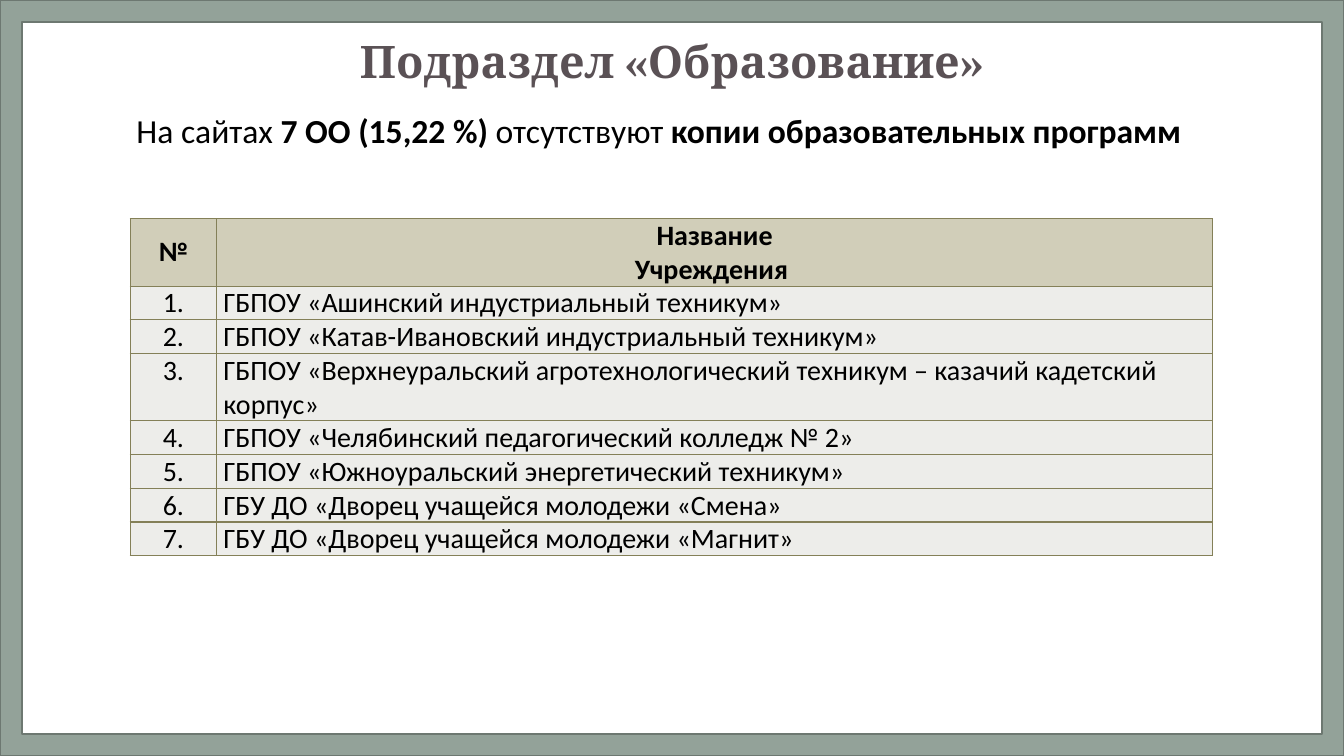
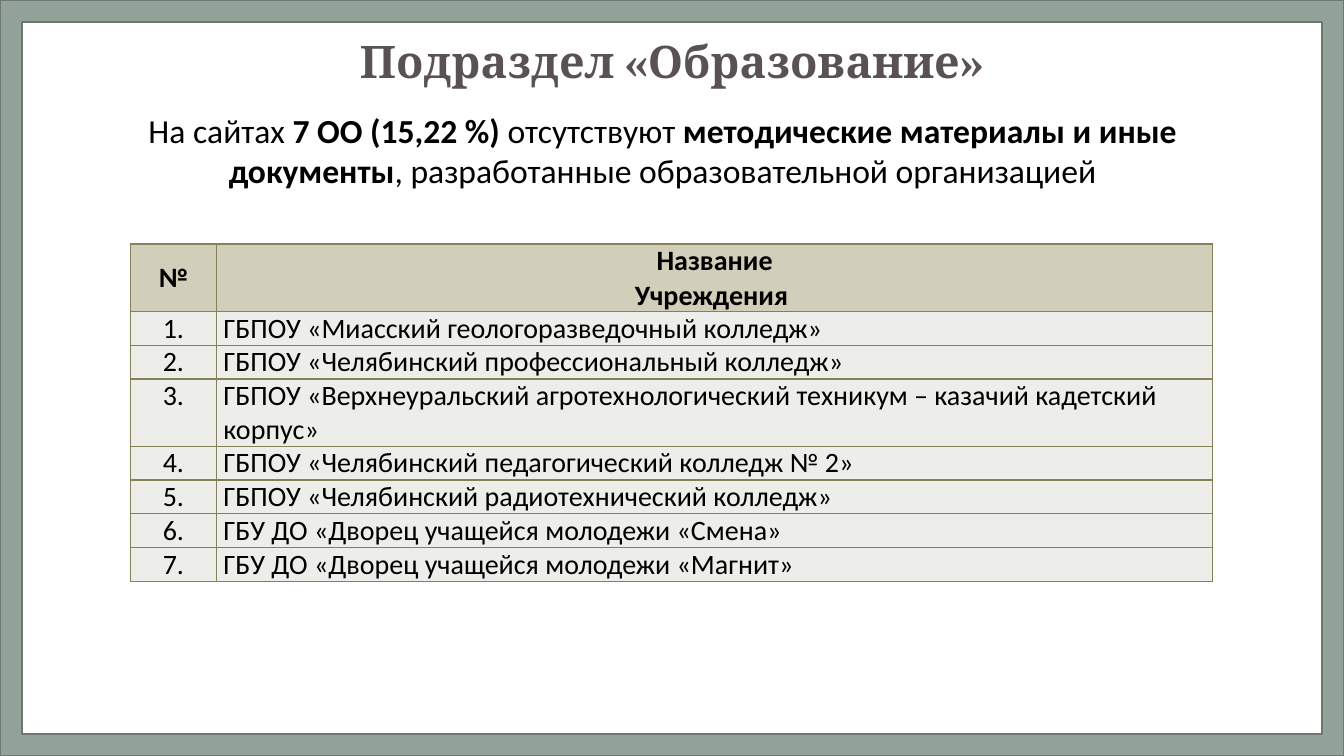
from dataclasses import dataclass

from lxml.etree import SubElement
from pptx import Presentation
from pptx.dml.color import RGBColor
from pptx.enum.shapes import MSO_SHAPE as Shape
from pptx.enum.text import MSO_ANCHOR as Anchor, PP_ALIGN as Align
from pptx.oxml.ns import qn
from pptx.util import Cm, Pt


@dataclass(frozen=True)
class Theme:
    frame: str = "93A299"
    frame_line: str = "6D7871"
    title: str = "5A5155"
    text: str = "000000"
    header_fill: str = "D1CEB9"
    row_fill: str = "EDEDEA"
    border: str = "848058"
    title_font: str = "Cambria"
    body_font: str = "Calibri"
    title_size: int = 32
    lead_size: int = 24
    table_size: int = 20


class Report:
    """Holds the deck, its style and the current page."""

    def __init__(self, theme):
        self.theme = theme
        self.deck = Presentation()
        self.deck.slide_width, self.deck.slide_height = Cm(33.87), Cm(19.05)
        self.page = None

    def add_page(self, title):
        self.page = self.deck.slides.add_slide(self.deck.slide_layouts[6])
        self.add_frame()
        self.add_title(title)

    def add_frame(self):
        frame = self.page.shapes.add_shape(
            Shape.FRAME, 0, 0, self.deck.slide_width, self.deck.slide_height)
        frame.adjustments[0] = 0.029
        frame.shadow.inherit = False
        frame.fill.solid()
        frame.fill.fore_color.rgb = RGBColor.from_string(self.theme.frame)
        frame.line.color.rgb = RGBColor.from_string(self.theme.frame_line)
        frame.line.width = Pt(1)

    def add_box(self, left, top, width, height):
        box = self.page.shapes.add_textbox(Cm(left), Cm(top), Cm(width), Cm(height))
        box.text_frame.word_wrap = True
        return box.text_frame

    def style_span(self, span, size, bold=False, font=None, color=None):
        span.font.name = font or self.theme.body_font
        span.font.size = Pt(size)
        span.font.bold = bold
        span.font.color.rgb = RGBColor.from_string(color or self.theme.text)

    def add_title(self, text):
        frame = self.add_box(2.33, 0.61, 29.21, 2.03)
        frame.vertical_anchor = Anchor.MIDDLE
        frame.text = text
        para = frame.paragraphs[0]
        para.alignment = Align.CENTER
        para.line_spacing = 0.9
        self.style_span(para.runs[0], self.theme.title_size, True,
                        self.theme.title_font, self.theme.title)

    def add_lead(self, parts, height):
        """Plain and bold parts take turns, starting with plain."""
        para = self.add_box(1.88, 2.64, 29.64, height).paragraphs[0]
        para.alignment = Align.CENTER
        for index, part in enumerate(parts):
            span = para.add_run()
            span.text = part
            self.style_span(span, self.theme.lead_size, index % 2 == 1)

    def add_borders(self, cell):
        properties = cell._tc.get_or_add_tcPr()
        for position, side in enumerate(("a:lnL", "a:lnR", "a:lnT", "a:lnB")):
            line = SubElement(properties, qn(side), w=str(Pt(1)))
            fill = SubElement(line, qn("a:solidFill"))
            SubElement(fill, qn("a:srgbClr"), val=self.theme.border)
            properties.insert(position, line)  # borders go before the fill

    def fill_cell(self, cell, text, centred, header):
        cell.text = text
        cell.margin_left = cell.margin_right = Cm(0.16 if header else 0.17)
        cell.margin_top = cell.margin_bottom = 0
        cell.vertical_anchor = Anchor.MIDDLE if header else Anchor.TOP
        cell.fill.solid()
        cell.fill.fore_color.rgb = RGBColor.from_string(
            self.theme.header_fill if header else self.theme.row_fill)
        for para in cell.text_frame.paragraphs:
            para.alignment = Align.CENTER if centred else Align.LEFT
            for span in para.runs:
                self.style_span(span, self.theme.table_size, header)
        self.add_borders(cell)

    def add_numbered_table(self, top, names):
        rows = [("№", "Название\nУчреждения ")]
        rows += [(f"{number}.", name) for number, name in enumerate(names, 1)]
        widths, header_height, row_height = (2.18, 25.1), 1.7, 0.85
        table = self.page.shapes.add_table(
            len(rows), len(widths), Cm(3.28), Cm(top), Cm(sum(widths)),
            Cm(header_height + row_height * len(names))).table
        for column, width in zip(table.columns, widths):
            column.width = Cm(width)
        for row_index, texts in enumerate(rows):
            header = row_index == 0
            table.rows[row_index].height = Cm(header_height if header else row_height)
            for column_index, text in enumerate(texts):
                self.fill_cell(table.cell(row_index, column_index), text,
                               header or column_index == 0, header)


# Content
TITLE = "Подраздел «Образование»"
LEAD_START = ("На сайтах ", "7 ОО (15,22 %) ", "отсутствуют ")
COSSACK = "ГБПОУ «Верхнеуральский агротехнологический техникум – казачий кадетский корпус»"
PEDAGOGICAL = "ГБПОУ «Челябинский педагогический колледж № 2»"
YOUTH_CENTRES = ("ГБУ ДО «Дворец учащейся молодежи «Смена»",
                 "ГБУ ДО «Дворец учащейся молодежи «Магнит»")


def main():
    report = Report(Theme())

    # Missing copies of programmes
    report.add_page(TITLE)
    report.add_lead((*LEAD_START, "копии образовательных программ "), 1.27)
    report.add_numbered_table(5.51, (
        "ГБПОУ «Ашинский индустриальный техникум»",
        "ГБПОУ «Катав-Ивановский индустриальный техникум»",
        COSSACK,
        PEDAGOGICAL,
        "ГБПОУ «Южноуральский энергетический техникум»",
        *YOUTH_CENTRES))

    # Missing teaching materials
    report.add_page(TITLE)
    report.add_lead((*LEAD_START, "методические материалы и иные документы",
                     ", разработанные образовательной организацией"), 2.31)
    report.add_numbered_table(6.15, (
        "ГБПОУ «Миасский геологоразведочный колледж»",
        "ГБПОУ «Челябинский профессиональный колледж»",
        COSSACK,
        PEDAGOGICAL,
        "ГБПОУ «Челябинский радиотехнический колледж»",
        *YOUTH_CENTRES))

    report.deck.save("out.pptx")


if __name__ == "__main__":
    main()
